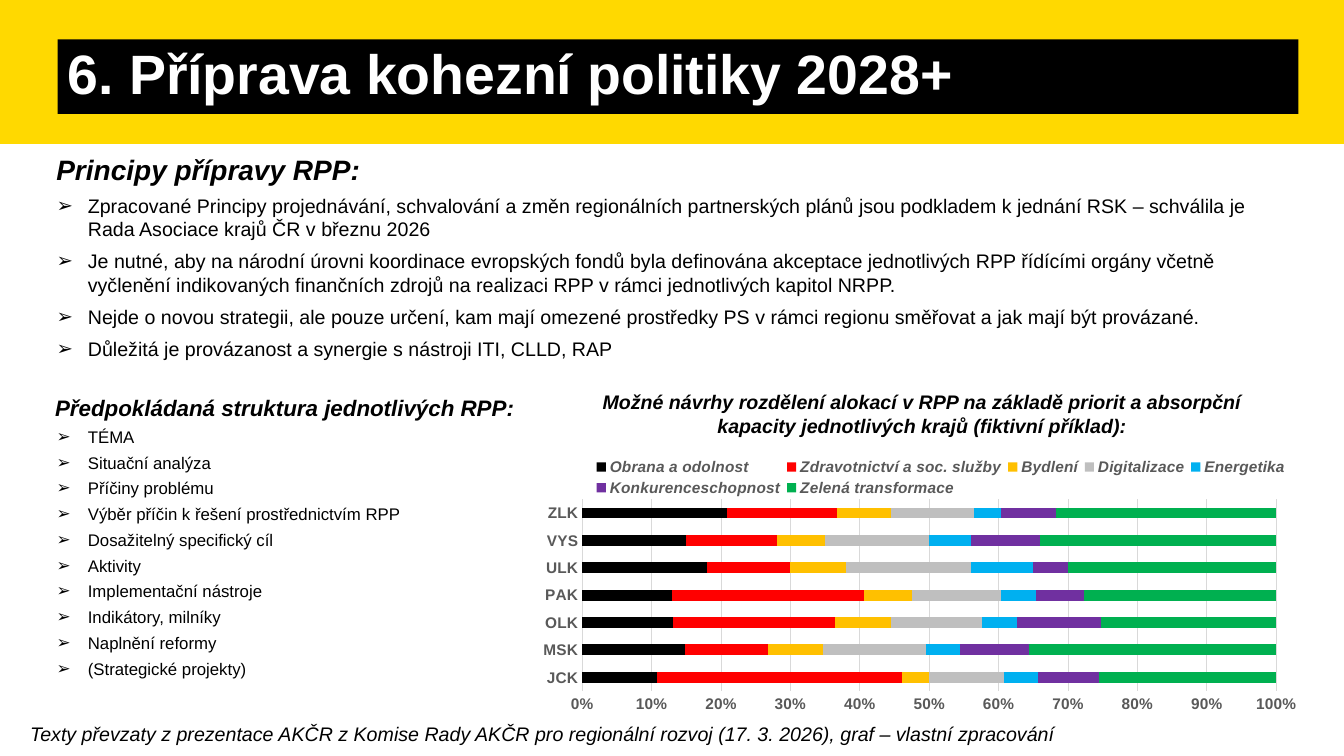
from dataclasses import dataclass

from lxml import etree
from pptx import Presentation
from pptx import util as u
from pptx.chart.data import CategoryChartData
from pptx.dml.color import RGBColor
from pptx.enum import chart as ce
from pptx.enum import shapes, text
from pptx.oxml import parse_xml
from pptx.oxml.ns import nsdecls, qn


@dataclass(frozen=True)
class Theme:
    font: str = "Arial"
    yellow: str = "FFD900"
    black: str = "000000"
    white: str = "FFFFFF"
    axis: str = "595959"
    grid: str = "D9D9D9"
    title: float = 39.6
    heading: float = 20
    subheading: float = 16
    body: float = 14
    steps: float = 12
    chart: float = 11


THEME = Theme()

PRINCIPLES = [
    "Zpracované Principy projednávání, schvalování a změn regionálních partnerských plánů jsou "
    "podkladem k jednání RSK – schválila je Rada Asociace krajů ČR v březnu 2026",
    "Je nutné, aby na národní úrovni koordinace evropských fondů byla definována akceptace "
    "jednotlivých RPP řídícími orgány včetně vyčlenění indikovaných finančních zdrojů na realizaci "
    "RPP v rámci jednotlivých kapitol NRPP.",
    "Nejde o novou strategii, ale pouze určení, kam mají omezené prostředky PS v rámci regionu "
    "směřovat a jak mají být provázané.",
    "Důležitá je provázanost a synergie s nástroji ITI, CLLD, RAP",
]
STRUCTURE = [
    "TÉMA", "Situační analýza", "Příčiny problému", "Výběr příčin k řešení prostřednictvím RPP",
    "Dosažitelný specifický cíl", "Aktivity", "Implementační nástroje", "Indikátory, milníky",
    "Naplnění reformy", "(Strategické projekty)",
]
REGIONS = ["JCK", "MSK", "OLK", "PAK", "ULK", "VYS", "ZLK"]
ALLOCATIONS = [
    ("Obrana a odolnost", "000000", (11, 15, 13, 13, 18, 15, 21)),
    ("Zdravotnictví a soc. služby", "FF0000", (36, 12, 23, 28, 12, 13, 16)),
    ("Bydlení", "FFC000", (4, 8, 8, 7, 8, 7, 8)),
    ("Digitalizace", "BFBFBF", (11, 15, 13, 13, 18, 15, 12)),
    ("Energetika", "00B0F0", (5, 5, 5, 5, 9, 6, 4)),
    ("Konkurenceschopnost", "7030A0", (9, 10, 12, 7, 5, 10, 8)),
    ("Zelená transformace", "00B050", (26, 36, 25, 28, 30, 34, 32)),
]


def apply(target, **formats):
    for name, value in formats.items():
        setattr(target, name, value)


def style_font(font, size, color=THEME.black, **formats):
    apply(font, name=THEME.font, size=u.Pt(size), **formats)
    font.color.rgb = RGBColor.from_string(color)


def fill_solid(fill, color):
    fill.solid()
    fill.fore_color.rgb = RGBColor.from_string(color)


def place(shape, left, top, width, height):
    apply(shape, left=u.Cm(left), top=u.Cm(top), width=u.Cm(width), height=u.Cm(height))


def add_band(page, width, height):
    """Put the yellow band behind everything else on the page."""
    band = page.shapes.add_shape(shapes.MSO_SHAPE.RECTANGLE, 0, 0, width, height)
    band.shadow.inherit = False
    fill_solid(band.fill, THEME.yellow)
    band.line.fill.background()
    page.shapes._spTree.insert(2, band._element)


def write(para, words, size, color=THEME.black, **formats):
    span = para.add_run()
    span.text = words
    style_font(span.font, size, color, **formats)


def set_title(title, words, *area):
    place(title, *area)
    fill_solid(title.fill, THEME.black)
    apply(title.text_frame, vertical_anchor=text.MSO_ANCHOR.MIDDLE, word_wrap=True,
          auto_size=text.MSO_AUTO_SIZE.NONE)
    para = title.text_frame.paragraphs[0]
    apply(para, alignment=text.PP_ALIGN.LEFT, line_spacing=0.9)
    write(para, words, THEME.title, THEME.white, bold=True)


def add_label(page, words, size, *area, bold=True, align=text.PP_ALIGN.LEFT):
    box = page.shapes.add_textbox(*map(u.Cm, area))
    box.text_frame.word_wrap = True
    para = box.text_frame.paragraphs[0]
    para.alignment = align
    write(para, words, size, bold=bold, italic=True)


def add_bullet(para):
    props = para._p.get_or_add_pPr()
    props.set("marL", str(u.Cm(0.79)))
    props.set("indent", str(-u.Cm(0.79)))
    color = etree.SubElement(props, qn("a:buClr"))
    etree.SubElement(color, qn("a:srgbClr"), val=THEME.black)
    etree.SubElement(props, qn("a:buFont"), typeface=THEME.font)
    etree.SubElement(props, qn("a:buChar"), char="➢")


def fill_list(body, items, size, gap, *area):
    place(body, *area)
    frame = body.text_frame
    apply(frame, word_wrap=True, auto_size=text.MSO_AUTO_SIZE.NONE,
          vertical_anchor=text.MSO_ANCHOR.TOP)
    for index, item in enumerate(items):
        para = frame.add_paragraph() if index else frame.paragraphs[0]
        add_bullet(para)
        apply(para, space_before=u.Pt(0), space_after=u.Pt(gap), line_spacing=1.0)
        write(para, item, size)


def set_layout(parent, position, left, top, width, height, inner=False):
    """Fix a chart part at fractions of the chart area."""
    for old in parent.findall(qn("c:layout")):
        parent.remove(old)
    target = '<c:layoutTarget val="inner"/>' if inner else ""
    sizes = "".join(f'<c:{tag} val="{value}"/>' for tag, value in
                    zip("xywh", (left, top, width, height)))
    parent.insert(position, parse_xml(
        f'<c:layout {nsdecls("c")}><c:manualLayout>{target}<c:xMode val="edge"/>'
        f'<c:yMode val="edge"/>{sizes}</c:manualLayout></c:layout>'))


def style_axis(axis):
    apply(axis, major_tick_mark=ce.XL_TICK_MARK.NONE, minor_tick_mark=ce.XL_TICK_MARK.NONE)
    style_font(axis.tick_labels.font, THEME.chart, THEME.axis, bold=True)


def style_line(line):
    line.color.rgb = RGBColor.from_string(THEME.grid)
    line.width = u.Pt(0.75)


def add_allocation_chart(page, *area):
    data = CategoryChartData()
    data.categories = REGIONS
    for name, _, values in ALLOCATIONS:
        data.add_series(name, values)
    chart = page.shapes.add_chart(ce.XL_CHART_TYPE.BAR_STACKED_100, *map(u.Cm, area), data).chart
    apply(chart, has_title=False, has_legend=True)
    style_font(chart.font, THEME.chart)
    plot = chart.plots[0]
    apply(plot, gap_width=150, overlap=100, vary_by_categories=False)
    for series, (_, color, _) in zip(plot.series, ALLOCATIONS):
        fill_solid(series.format.fill, color)

    for axis in (chart.category_axis, chart.value_axis):
        style_axis(axis)
    chart.category_axis.has_major_gridlines = False
    style_line(chart.category_axis.format.line)
    chart.value_axis.format.line.fill.background()
    style_line(chart.value_axis.major_gridlines.format.line)
    apply(chart.value_axis, minimum_scale=0, maximum_scale=1, major_unit=0.1)
    apply(chart.value_axis.tick_labels, number_format="0%", number_format_is_linked=False)

    apply(chart.legend, position=ce.XL_LEGEND_POSITION.TOP, include_in_layout=False)
    style_font(chart.legend.font, THEME.chart, THEME.axis, bold=True, italic=True)
    set_layout(chart.legend._element, 1, 0.07, 0.07, 0.91, 0.14)
    set_layout(chart._chartSpace.chart.plotArea, 0, 0.06, 0.21, 0.9, 0.61, inner=True)


def main():
    deck = Presentation()
    apply(deck, slide_width=u.Cm(33.87), slide_height=u.Cm(19.05))
    page = deck.slides.add_slide(deck.slide_layouts.get_by_name("Two Content"))
    title, principles, structure = page.placeholders

    add_band(page, deck.slide_width, u.Cm(3.63))
    set_title(title, "6. Příprava kohezní politiky 2028+", 1.45, 0.99, 31.27, 1.88)
    add_label(page, "Principy přípravy RPP:", THEME.heading, 1.17, 3.73, 31.29, 1.3)
    fill_list(principles, PRINCIPLES, THEME.body, 6, 1.17, 4.75, 31.52, 4.5)
    add_label(page, "Předpokládaná struktura jednotlivých RPP:", THEME.subheading,
              1.14, 9.8, 12.37, 1.3)
    fill_list(structure, STRUCTURE, THEME.steps, 4, 1.17, 10.62, 9.47, 6.68)
    add_label(page, "Možné návrhy rozdělení alokací v RPP na základě priorit a absorpční "
              "kapacity jednotlivých krajů (fiktivní příklad):", THEME.body,
              14.91, 9.7, 16.66, 1.45, align=text.PP_ALIGN.CENTER)
    add_allocation_chart(page, 13.51, 10.92, 19.43, 7.92)
    add_label(page, "Texty převzaty z prezentace AKČR z Komise Rady AKČR pro regionální rozvoj "
              "(17. 3. 2026), graf – vlastní zpracování", THEME.body,
              0.51, 18.06, 31.06, 0.86, bold=False)
    deck.save("out.pptx")


if __name__ == "__main__":
    main()
